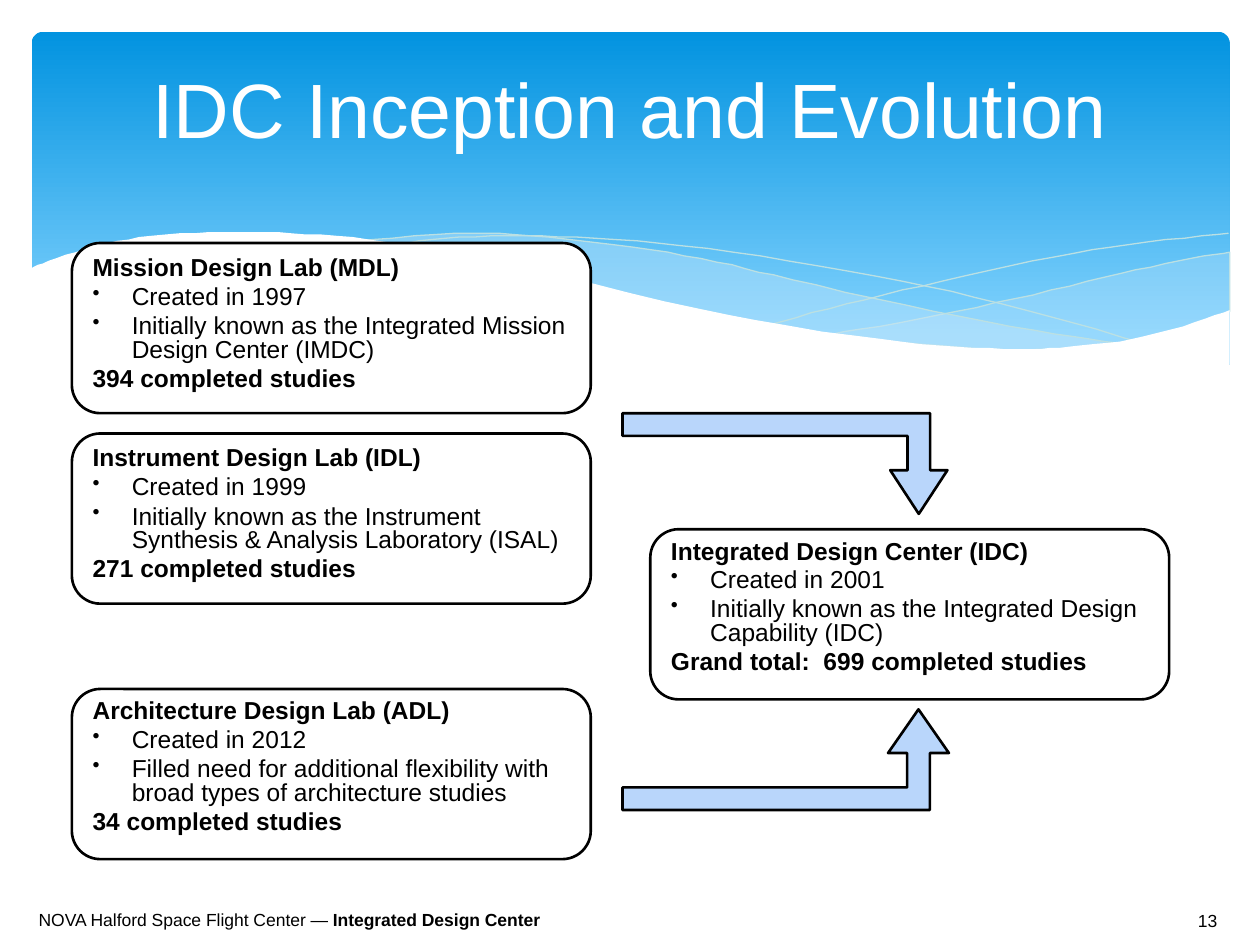
from lxml import etree
from pptx import Presentation
from pptx.dml.color import RGBColor
from pptx.enum.shapes import MSO_SHAPE
from pptx.enum.text import MSO_ANCHOR, MSO_AUTO_SIZE, PP_ALIGN
from pptx.oxml.ns import qn
from pptx.util import Cm, Pt

ROUND, BENT = MSO_SHAPE.ROUNDED_RECTANGLE, MSO_SHAPE.BENT_UP_ARROW
TOP, MIDDLE = MSO_ANCHOR.TOP, MSO_ANCHOR.MIDDLE
LEFT, CENTER, RIGHT = PP_ALIGN.LEFT, PP_ALIGN.CENTER, PP_ALIGN.RIGHT
NO_FIT = MSO_AUTO_SIZE.NONE

WHITE = RGBColor(0xFF, 0xFF, 0xFF)
BLACK = RGBColor(0, 0, 0)
DEEP = RGBColor(0x02, 0x93, 0xE0)
SKY = RGBColor(0x83, 0xD3, 0xFE)
FOAM = RGBColor(0xC6, 0xE7, 0xFC)
EDGE = RGBColor(0xBB, 0xE0, 0xE3)
PALE = RGBColor(0xB9, 0xD6, 0xFB)

# Wave knots in 1/951 of the band's width, from its top left corner
WEDGE = [
    [(951, 175), (910, 182), (851, 195), (780, 212), (704, 228), (636, 240)],
    [(636, 240), (694, 247), (756, 252), (810, 252), (864, 247), (910, 237),
     (951, 222)],
]
RIBBON = [
    [(868, 248), (812, 240), (716, 222), (604, 197), (544, 183), (477, 171),
     (395, 162), (336, 160), (261, 166)],
    [(261, 166), (317, 174), (379, 186), (466, 207), (559, 227), (640, 241),
     (711, 250), (782, 253), (832, 252), (868, 248)],
]
FALL = [[(284, 170), (328, 164), (391, 162), (464, 165), (557, 175),
         (670, 194), (770, 216), (882, 247)]]
RISE = [[(588, 232), (647, 216), (723, 198), (811, 179), (885, 167),
         (950, 160)]]
SHORE = [
    [(951, 221), (914, 234), (873, 244), (824, 250), (783, 252), (719, 249),
     (643, 240), (554, 225), (422, 195), (340, 177), (268, 165), (206, 160),
     (153, 159), (95, 162), (52, 170), (13, 182), (0, 188)],
    [(0, 304), (951, 304)],
]

CARD = (10.46, 3.43)
CARDS = [
    (1.45, 8.74, 0.8, "Instrument Design Lab (IDL)", "Created in 1999",
     "Initially known as the Instrument Synthesis & Analysis Laboratory (ISAL)",
     "271 completed studies"),
    (1.45, 4.9, 0.8, "Mission Design Lab (MDL)", "Created in 1997",
     "Initially known as the Integrated Mission Design Center (IMDC)",
     "394 completed studies"),
    (13.11, 10.67, 0.7, "Integrated Design Center (IDC)", "Created in 2001",
     "Initially known as the Integrated Design Capability (IDC)",
     "Grand total:  699 completed studies"),
    (1.45, 13.89, 0.7, "Architecture Design Lab (ADL)", "Created in 2012",
     "Filled need for additional flexibility with broad types of "
     "architecture studies", "34 completed studies"),
]


def write(para, text, size=14, color=BLACK, bold=False, align=LEFT):
    para.alignment = align
    run = para.add_run()
    run.text = text
    font = run.font
    font.name, font.size, font.bold = "Arial", Pt(size), bold
    font.color.rgb = color


def paint(shape, fill=None, line=None, width=1.5, alpha=None):
    shape.shadow.inherit = False
    if fill is None:
        shape.fill.background()
    else:
        shape.fill.solid()
        shape.fill.fore_color.rgb = fill
    if alpha:
        tone = shape.fill._xPr.find(".//" + qn("a:srgbClr"))
        etree.SubElement(tone, qn("a:alpha"), val=str(alpha * 1000))
    if line is None:
        shape.line.fill.background()
    else:
        shape.line.color.rgb = line
        shape.line.width = Pt(width)


def curve(knots, steps=5):
    """Smooth the knots with a Catmull-Rom spline."""
    ends = [knots[0], *knots, knots[-1]]
    dots = [knots[0]]
    for a, b, c, d in zip(ends, ends[1:], ends[2:], ends[3:]):
        for step in range(1, steps + 1):
            t = step / steps
            dots.append(tuple(
                q + t * (r - p + t * (2 * p - 5 * q + 4 * r - s
                                      + t * (3 * q - p - 3 * r + s))) / 2
                for p, q, r, s in zip(a, b, c, d)))
    return dots


def add_wave(shapes, box, runs, fill=None, **style):
    left, top, width, _ = box
    dots = [dot for run in runs for dot in curve(run)]
    pen = shapes.build_freeform(*dots[0], scale=Cm(width) / 951)
    pen.add_line_segments(dots[1:], close=fill is not None)
    paint(pen.convert_to_shape(Cm(left), Cm(top)), fill, **style)


def add_band(shapes, box):
    band = shapes.add_shape(ROUND, *map(Cm, box))
    band.adjustments[0] = 0.034
    paint(band, DEEP)
    band.fill.gradient()
    band.fill.gradient_angle = 270
    for stop, spot, color in zip(band.fill.gradient_stops, (0, 0.9),
                                 (DEEP, SKY)):
        stop.position, stop.color.rgb = spot, color
    add_wave(shapes, box, WEDGE, FOAM, line=EDGE, width=0.75, alpha=29)
    add_wave(shapes, box, RIBBON, FOAM, line=EDGE, width=0.75, alpha=40)
    for run in (FALL, RISE):
        add_wave(shapes, box, run, line=EDGE, width=0)
    add_wave(shapes, box, SHORE, WHITE)


def set_title(shapes, box, text):
    title = shapes.title
    title.left, title.top, title.width, title.height = map(Cm, box)
    frame = title.text_frame
    frame.vertical_anchor, frame.auto_size = TOP, NO_FIT
    frame.margin_top = Cm(0.3)
    write(frame.paragraphs[0], text, size=44, color=WHITE, align=CENTER)
    shapes._spTree.append(title._element)  # in front of the band


def add_card(shapes, box, lead, texts):
    card = shapes.add_shape(ROUND, *map(Cm, box))
    paint(card, WHITE, BLACK)
    frame = card.text_frame
    frame.word_wrap, frame.vertical_anchor = True, TOP
    for row, text in enumerate(texts):
        para = frame.add_paragraph() if row else frame.paragraphs[0]
        para.line_spacing = 0.8 if row else lead
        para.space_before = Pt(3.2)
        item = row in (1, 2)
        write(para, text, bold=not item)
        if item:
            props = para._p.get_or_add_pPr()
            props.set("marL", str(Cm(0.79)))
            props.set("indent", str(-Cm(0.79)))
            etree.SubElement(props, qn("a:buSzPct"), val="85000")
            etree.SubElement(props, qn("a:buChar"), char="•")


def add_arrow(shapes, box, head, down=False):
    arrow = shapes.add_shape(BENT, *map(Cm, box))
    for spot, part in enumerate((0.225, head, 0.434)):
        arrow.adjustments[spot] = part
    paint(arrow, PALE, BLACK)
    if down:
        arrow.rotation = 180
        arrow._element.spPr.find(qn("a:xfrm")).set("flipH", "1")


def add_note(shapes, box, parts, align=LEFT):
    """Place a one-line footer made of (text, bold) parts."""
    frame = shapes.add_textbox(*map(Cm, box)).text_frame
    frame.word_wrap, frame.vertical_anchor = True, MIDDLE
    for text, bold in parts:
        write(frame.paragraphs[0], text, size=10, bold=bold, align=align)


def main():
    deck = Presentation()
    deck.slide_width, deck.slide_height = Cm(25.4), Cm(19.05)
    shapes = deck.slides.add_slide(deck.slide_layouts[5]).shapes
    add_band(shapes, (0.64, 0.64, 24.15, 6.86))
    set_title(shapes, (1.27, 0.94, 22.86, 3.48), "IDC Inception and Evolution")
    for left, top, lead, *texts in CARDS:
        add_card(shapes, (left, top, *CARD), lead, texts)
    add_arrow(shapes, (12.55, 14.3, 6.58, 2.03), 0.302)
    add_arrow(shapes, (12.55, 8.33, 6.55, 2.03), 0.284, down=True)
    add_note(shapes, (0.53, 18.03, 11.53, 1.02),
             [("NOVA Halford Space Flight Center — ", False),
              ("Integrated Design Center", True)])
    add_note(shapes, (21.56, 18.06, 3.23, 0.99), [("13", False)], align=RIGHT)
    deck.save("out.pptx")


if __name__ == "__main__":
    main()
